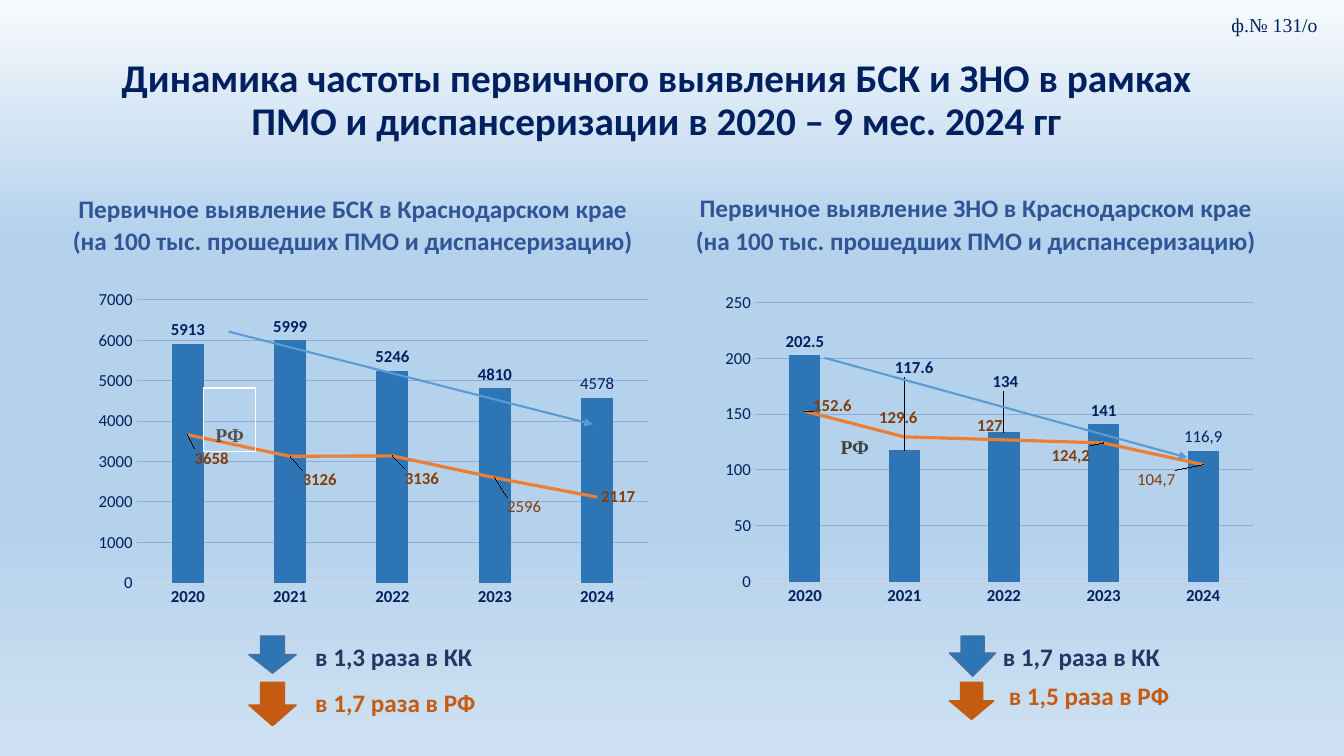
import lxml.etree
import pptx
import pptx.chart.data
import pptx.dml.color
import pptx.enum.chart
import pptx.enum.shapes
import pptx.enum.text
import pptx.oxml.ns
import pptx.util

Pt = pptx.util.Pt
qn = pptx.oxml.ns.qn
ALIGN = pptx.enum.text.PP_ALIGN
ANCHOR = pptx.enum.text.MSO_ANCHOR
LABEL = pptx.enum.chart.XL_LABEL_POSITION

NAVY, BLUE, ORANGE, BROWN = "002060", "2E75B6", "C55A11", "843C0B"
BACKGROUND = [(0, "F7FAFD"), (31, "B5D2EC"), (70, "B5D2EC"), (100, "CEE1F2")]
TITLE = ("Динамика частоты первичного выявления БСК и ЗНО в рамках "
         "ПМО и диспансеризации в 2020 – 9 мес. 2024 гг")
FORM = "ф.№ 131/о"
RUSSIA = "РФ"
YEARS = ["2020", "2021", "2022", "2023", "2024"]
HEADING_END = "(на 100 тыс. прошедших ПМО и диспансеризацию)"
HEADINGS = [
    ("Первичное выявление БСК в Краснодарском крае", (12, 133, 480, 54)),
    ("Первичное выявление ЗНО в Краснодарском крае", (457, 132.5, 480, 54)),
]
# label entries: year index -> (custom text, bold, shift right, shift down)
CHARTS = [
    dict(box=(508.3, 208.8, 402.5, 240.5), plot=(0.077, 0.03, 0.884, 0.83), top=250, step=50,
         region=[202.5, 117.6, 134, 141, 116.9], country=[152.6, 129.6, 127, 124.2, 104.7],
         region_labels={1: (None, True, 7, -49), 2: (None, True, 1, -26),
                        4: ("116,9", False, 0, 0)},
         country_labels={0: (None, True, 3, -4), 1: (None, True, -21, -14),
                         2: (None, True, -22, -10), 3: ("124,2", True, -40, 9),
                         4: ("104,7", False, -50, 11)}),
    dict(box=(59.8, 161.3, 415.4, 283), plot=(0.091, 0.187, 0.88, 0.714), top=7000, step=1000,
         region=[5913, 5999, 5246, 4810, 4578], country=[3658, 3126, 3136, 2596, 2117],
         region_labels={4: ("4578", False, 0, 0)},
         country_labels={0: (None, True, 2, 17), 1: (None, True, 6, 17),
                         2: (None, True, 6, 16), 3: ("2596", False, 6, 21)}),
]
TRENDS = [(589, 255.6, 848.2, 326.9), (163.4, 236.9, 423.4, 303.1)]
CHANGES = [
    ("в 1,3 раза в КК", "203864", (218, 454.3), BLUE, "43739E", (177.8, 454.3, 33.8, 26.6), 0.5),
    ("в 1,7 раза в КК", "203864", (709.2, 454.3), BLUE, "43739E", (678.2, 454.3, 33.1, 28.8), 0.578),
    ("в 1,7 раза в РФ", ORANGE, (218, 487.4), ORANGE, ORANGE, (177.8, 487.4, 33.8, 31), 0.476),
    ("в 1,5 раза в РФ", ORANGE, (713.5, 482.4), ORANGE, ORANGE, (678.2, 487.4, 31.7, 26.6), 0.504),
]


def rgb(code):
    return pptx.dml.color.RGBColor.from_string(code)


def points(values):
    return [Pt(value) for value in values]


def set_font(font, size, color, bold=False, face="Calibri"):
    font.size, font.bold, font.name = Pt(size), bold, face
    font.color.rgb = rgb(color)


def set_line(line, color, width):
    line.color.rgb = rgb(color)
    line.width = Pt(width)


def write(frame, text, size=18, color=NAVY, bold=True, face="Calibri",
          align=ALIGN.LEFT, spacing=None, anchor=None):
    frame.text = text
    if anchor is not None:
        frame.vertical_anchor = anchor
    for paragraph in frame.paragraphs:
        paragraph.alignment = align
        if spacing:
            paragraph.line_spacing = spacing
        for run in paragraph.runs:
            set_font(run.font, size, color, bold, face)


def add_text(box, text, **style):
    frame = slide.shapes.add_textbox(*points(box)).text_frame
    frame.word_wrap = True
    write(frame, text, **style)


def add_node(parent, tag, **attributes):
    return lxml.etree.SubElement(parent, qn(tag), **attributes)


def add_layout(parent, position, **values):
    layout = add_node(parent, "c:layout")
    manual = add_node(layout, "c:manualLayout")
    for tag, value in values.items():
        add_node(manual, "c:" + tag, val=str(value))
    parent.insert(position, layout)


def move_to_line(chart):
    bars = chart.element.xpath(".//c:barChart")[0]
    country = bars.findall(qn("c:ser"))[1]
    for unused in country.findall(qn("c:invertIfNegative")):
        country.remove(unused)
    lines = add_node(bars.getparent(), "c:lineChart")
    bars.addnext(lines)
    add_node(lines, "c:grouping", val="standard")
    add_node(lines, "c:varyColors", val="0")
    lines.append(country)
    add_node(lines, "c:marker", val="1")
    for axis in bars.findall(qn("c:axId")):
        add_node(lines, "c:axId", val=axis.get("val"))


def label_series(chart, number, color, position, special, size):
    series = chart.series[number] if hasattr(chart, "series") else chart.plots[number].series[0]
    labels = series.data_labels
    labels.show_value = True
    labels.position = position
    set_font(labels.font, 12, color, True)
    for index, (text, bold, right, down) in special.items():
        label = series.points[index].data_label
        if text:
            write(label.text_frame, text, size=12, color=color, bold=bold, align=None)
        else:
            set_font(label.font, 12, color, bold)
        label.position = position
        if right or down:
            element = chart.element.xpath(".//c:ser")[number].xpath(
                f".//c:dLbl[c:idx/@val='{index}']")[0]
            add_layout(element, 1, x=round(right / size[0], 4), y=round(down / size[1], 4))


def add_combined_chart(box, plot, top, step, region, country, region_labels, country_labels):
    data = pptx.chart.data.CategoryChartData()
    data.categories = YEARS
    data.add_series("Series 1", region)
    data.add_series("Series 2", country)
    chart = slide.shapes.add_chart(
        pptx.enum.chart.XL_CHART_TYPE.COLUMN_CLUSTERED, *points(box), data).chart
    chart.has_legend = chart.has_title = False
    set_font(chart.font, 10, "000000")
    move_to_line(chart)

    columns, lines = chart.plots
    columns.gap_width = 219
    columns.vary_by_categories = False
    columns.series[0].format.fill.solid()
    columns.series[0].format.fill.fore_color.rgb = rgb(BLUE)
    russia = lines.series[0]
    set_line(russia.format.line, "ED7D31", 2.25)
    russia.marker.style = pptx.enum.chart.XL_MARKER_STYLE.NONE
    russia.smooth = False
    label_series(chart, 0, NAVY, LABEL.OUTSIDE_END, region_labels, box[2:])
    label_series(chart, 1, BROWN, LABEL.RIGHT, country_labels, box[2:])

    years, scale = chart.category_axis, chart.value_axis
    for axis, bold in ((years, True), (scale, False)):
        axis.major_tick_mark = pptx.enum.chart.XL_TICK_MARK.NONE
        set_font(axis.tick_labels.font, 12, NAVY, bold)
    set_line(years.format.line, "D9D9D9", 0.75)
    scale.format.line.fill.background()
    scale.minimum_scale, scale.maximum_scale, scale.major_unit = 0, top, step
    set_line(scale.major_gridlines.format.line, "8FAADC", 0.75)

    area = chart.element.xpath(".//c:plotArea")[0]
    for layout in area.findall(qn("c:layout")):
        area.remove(layout)
    x, y, w, h = plot
    add_layout(area, 0, layoutTarget="inner", xMode="edge", yMode="edge", x=x, y=y, w=w, h=h)


def add_arrow(box, fill, line, head):
    arrow = slide.shapes.add_shape(pptx.enum.shapes.MSO_SHAPE.DOWN_ARROW, *points(box))
    arrow.shadow.inherit = False
    arrow.adjustments[1] = head
    arrow.fill.solid()
    arrow.fill.fore_color.rgb = rgb(fill)
    set_line(arrow.line, line, 1)


def add_trend(ends):
    trend = slide.shapes.add_connector(pptx.enum.shapes.MSO_CONNECTOR.STRAIGHT, *points(ends))
    set_line(trend.line, "5B9BD5", 1.5)
    properties = trend.element.spPr
    add_node(properties.find(qn("a:ln")), "a:tailEnd", type="triangle")
    add_node(properties, "a:effectLst")


deck = pptx.Presentation()
deck.slide_width, deck.slide_height = Pt(960), Pt(540)
slide = deck.slides.add_slide(deck.slide_layouts[6])

slide.background.fill.gradient()
slide.background.fill.gradient_angle = 270
stops = slide.element.xpath(".//a:gsLst")[0]
for stop in list(stops):
    stops.remove(stop)
for percent, color in BACKGROUND:
    add_node(add_node(stops, "a:gs", pos=str(percent * 1000)), "a:srgbClr", val=color)

add_text((54.7, 33.8, 828, 77), TITLE, size=28, align=ALIGN.CENTER, spacing=0.9, anchor=ANCHOR.MIDDLE)
for chart_content in CHARTS:
    add_combined_chart(**chart_content)

russia_table = slide.shapes.add_table(1, 1, *points((145.4, 277.2, 37.4, 45.4))).table
russia_cell = russia_table.cell(0, 0)
russia_cell.fill.background()
russia_cell.vertical_anchor = ANCHOR.BOTTOM
write(russia_cell.text_frame, RUSSIA, size=14, color="525252", face="Times New Roman", align=ALIGN.CENTER)
add_text((593.3, 307.4, 35.3, 24.5), RUSSIA, size=14, color="404040", face="Times New Roman")
add_text((871.9, 5.8, 77, 24.5), FORM, size=14, bold=False, face="Times New Roman", align=ALIGN.CENTER)

for heading, box in HEADINGS:
    add_text(box, heading + "\n" + HEADING_END, color="2F5597", align=ALIGN.CENTER, spacing=1.07)
for text, color, corner, fill, line, arrow_box, head in CHANGES:
    add_arrow(arrow_box, fill, line, head)
    add_text((*corner, 170, 29), text, color=color)
for ends in TRENDS:
    add_trend(ends)

deck.save("out.pptx")
